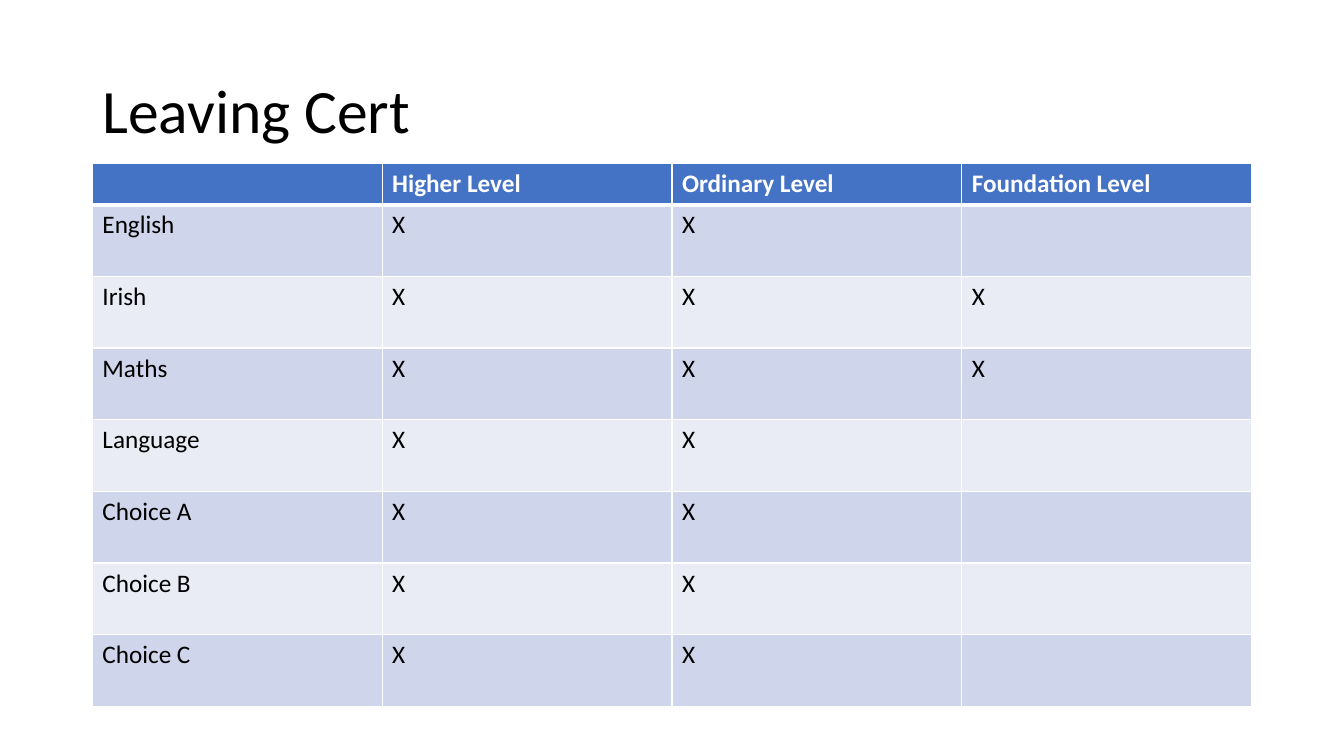
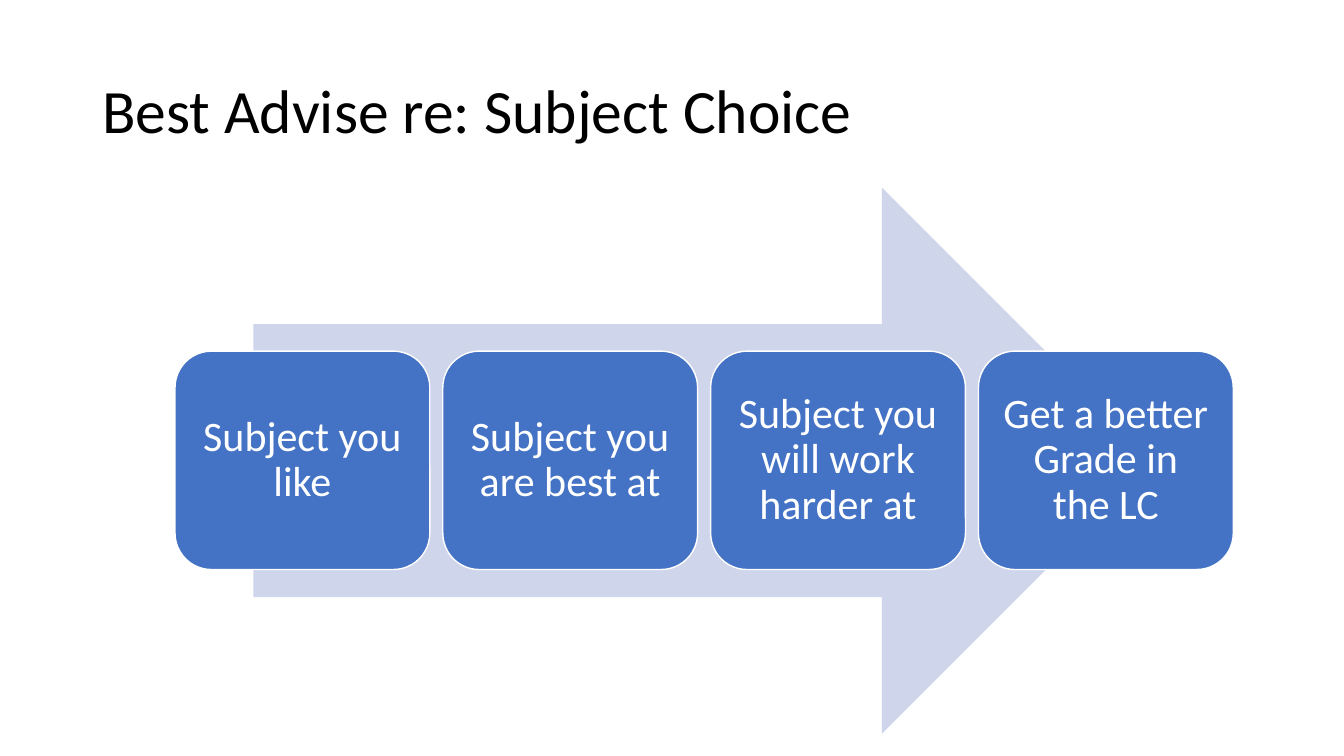
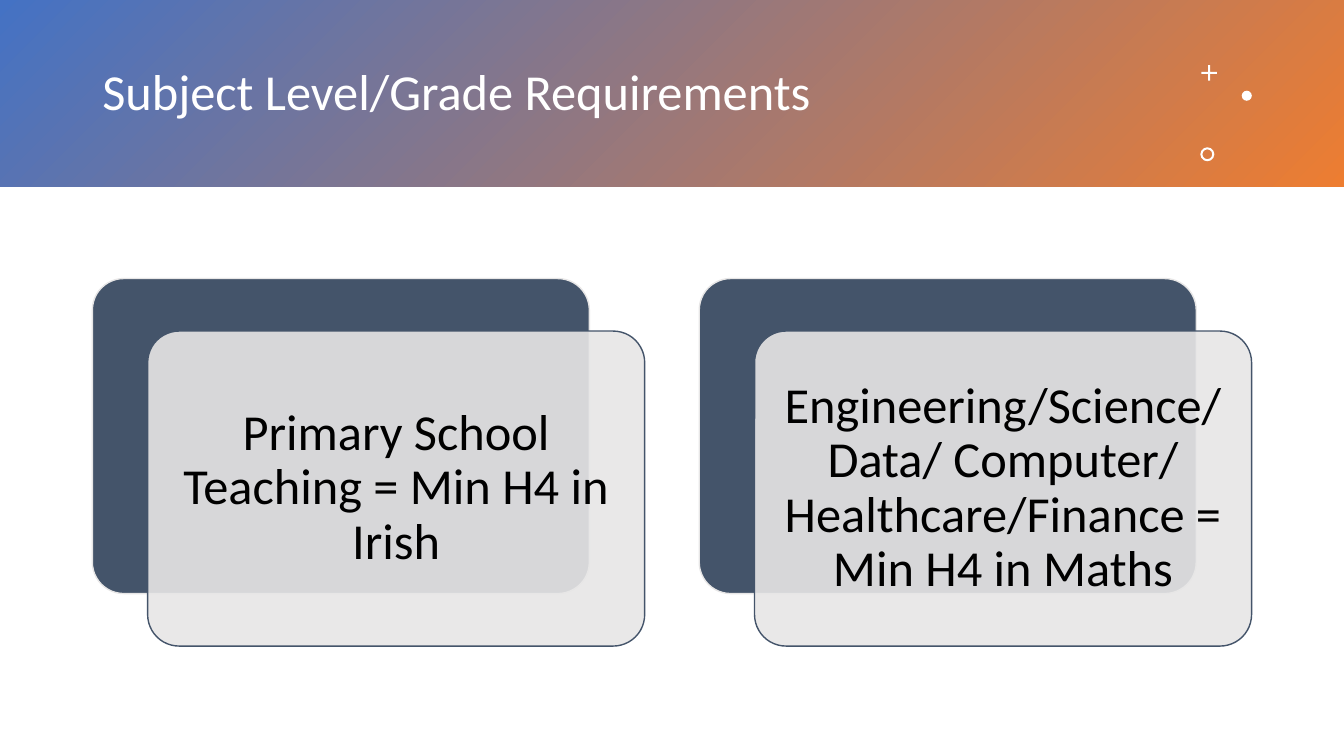
from dataclasses import dataclass

from lxml.etree import SubElement
from pptx import Presentation
from pptx.dml.color import RGBColor
from pptx.enum.shapes import MSO_SHAPE
from pptx.enum.text import MSO_ANCHOR, PP_ALIGN
from pptx.oxml.ns import qn
from pptx.util import Pt


@dataclass(frozen=True)
class Theme:
    font: str = "Calibri"
    black: str = "000000"
    white: str = "FFFFFF"
    blue: str = "4472C4"
    orange: str = "ED7D31"
    slate: str = "44546A"
    grey: str = "E7E6E6"
    pale_blue: str = "CFD5EA"
    paler_blue: str = "E9EBF5"
    title_size: int = 44
    large_size: int = 36
    step_size: int = 30
    table_size: int = 18


THEME = Theme()
PAGE_WIDTH, PAGE_HEIGHT = 960, 540
MARGIN = 66
CONTENT_WIDTH = PAGE_WIDTH - 2 * MARGIN


def rgb(color):
    return RGBColor.from_string(color)


class Deck:
    def __init__(self, theme):
        self.theme = theme
        self.deck = Presentation()
        self.deck.slide_width = Pt(PAGE_WIDTH)
        self.deck.slide_height = Pt(PAGE_HEIGHT)
        self.page = None

    def add_page(self):
        self.page = self.deck.slides.add_slide(self.deck.slide_layouts[6])

    def style(self, para, size, color, bold=False):
        font = para.font
        font.name, font.size, font.bold = self.theme.font, Pt(size), bold
        font.color.rgb = rgb(color)

    def set_text(self, shape, text, size, color, align):
        frame = shape.text_frame
        frame.word_wrap = True
        frame.vertical_anchor = MSO_ANCHOR.MIDDLE
        para = frame.paragraphs[0]
        para.text = text
        para.alignment = align
        para.line_spacing = 0.9
        self.style(para, size, color)

    def title(self, text, top=29, width=CONTENT_WIDTH, height=104, size=THEME.title_size, color=THEME.black):
        box = self.page.shapes.add_textbox(Pt(MARGIN), Pt(top), Pt(width), Pt(height))
        self.set_text(box, text, size, color, PP_ALIGN.LEFT)

    def shape(self, kind, left, top, width, height, fill, line=None, corner=None, opacity=None):
        shape = self.page.shapes.add_shape(kind, Pt(left), Pt(top), Pt(width), Pt(height))
        shape.shadow.inherit = False
        shape.fill.solid()
        shape.fill.fore_color.rgb = rgb(fill)
        if opacity is not None:
            color = shape.element.spPr.find(f"{qn('a:solidFill')}/{qn('a:srgbClr')}")
            SubElement(color, qn("a:alpha"), val=str(opacity * 1000))
        if line:
            shape.line.color.rgb = rgb(line)
            shape.line.width = Pt(1)
        else:
            shape.line.fill.background()
        if corner is not None:
            shape.adjustments[0] = corner
        return shape

    def label(self, shape, text, size, color, inset):
        frame = shape.text_frame
        frame.margin_left = frame.margin_right = Pt(inset)
        frame.margin_top = frame.margin_bottom = Pt(inset)
        self.set_text(shape, text, size, color, PP_ALIGN.CENTER)

    def gradient_band(self, height, start, end):
        band = self.shape(MSO_SHAPE.RECTANGLE, 0, 0, PAGE_WIDTH, height, start)
        band.fill.gradient()
        band.fill.gradient_angle = 315
        for stop, color in zip(band.fill.gradient_stops, (start, end)):
            stop.color.rgb = rgb(color)

    def border(self, cell, top, bottom):
        properties = cell._tc.get_or_add_tcPr()
        for side, width in (("L", 1), ("R", 1), ("T", top), ("B", bottom)):
            line = SubElement(properties, qn(f"a:ln{side}"), w=str(Pt(width)))
            fill = SubElement(line, qn("a:solidFill"))
            SubElement(fill, qn("a:srgbClr"), val=self.theme.white)

    def table(self, rows, top, header_height, row_height):
        theme = self.theme
        height = header_height + row_height * (len(rows) - 1)
        frame = self.page.shapes.add_table(
            len(rows), len(rows[0]), Pt(MARGIN), Pt(top), Pt(CONTENT_WIDTH), Pt(height))
        for row_index, texts in enumerate(rows):
            header = row_index == 0
            band = theme.pale_blue if row_index % 2 else theme.paler_blue
            frame.table.rows[row_index].height = Pt(header_height if header else row_height)
            for column_index, text in enumerate(texts):
                cell = frame.table.cell(row_index, column_index)
                # The heavier rule under the header is shared with the first body row.
                self.border(cell, top=3 if row_index == 1 else 1, bottom=3 if header else 1)
                cell.fill.solid()
                cell.fill.fore_color.rgb = rgb(theme.blue if header else band)
                para = cell.text_frame.paragraphs[0]
                para.text = text
                self.style(para, theme.table_size, theme.white if header else theme.black, header)


def leaving_cert(deck):
    deck.add_page()
    deck.title("Leaving Cert")
    subjects = ("English", "Irish", "Maths", "Language", "Choice A", "Choice B", "Choice C")
    with_foundation = ("Irish", "Maths")
    rows = [("", "Higher Level", "Ordinary Level", "Foundation Level")]
    rows += [(name, "X", "X", "X" if name in with_foundation else "") for name in subjects]
    deck.table(rows, top=117, header_height=29.2, row_height=51.2)


def subject_choice(deck):
    theme = deck.theme
    deck.add_page()
    deck.title("Best Advise re: Subject Choice")
    deck.shape(MSO_SHAPE.RIGHT_ARROW, 181, 134, 644, 390, theme.pale_blue)
    steps = ("Subject you like", "Subject you are best at",
             "Subject you will work harder at", "Get a better Grade in the LC")
    width, gap = 182, 9.3
    for index, text in enumerate(steps):
        step = deck.shape(MSO_SHAPE.ROUNDED_RECTANGLE, 125 + index * (width + gap), 250.8,
                          width, 156, theme.blue, line=theme.white)
        deck.label(step, text, theme.step_size, theme.white, inset=8.4)


def requirements(deck):
    theme = deck.theme
    deck.add_page()
    deck.gradient_band(133.4, theme.blue, theme.orange)
    deck.title("Subject Level/Grade Requirements", 24, 774, 86, theme.large_size, theme.white)
    deck.shape(MSO_SHAPE.CROSS, 858.2, 46.6, 11, 11, theme.white, corner=0.43)
    deck.shape(MSO_SHAPE.OVAL, 887, 64.8, 7.2, 7.2, theme.white)
    deck.shape(MSO_SHAPE.DONUT, 857.4, 105.2, 10, 10, theme.white, corner=0.15)

    cards = ("Primary School Teaching = Min H4 in Irish",
             "Engineering/Science/ Data/ Computer/ Healthcare/Finance = Min H4 in Maths")
    width, height, pitch = 355, 225, 433.5
    for index, text in enumerate(cards):
        left, top = MARGIN + index * pitch, 199
        deck.shape(MSO_SHAPE.ROUNDED_RECTANGLE, left, top, width, height,
                   theme.slate, line=theme.grey, corner=0.1)
        front = deck.shape(MSO_SHAPE.ROUNDED_RECTANGLE, left + 39.5, top + 37.5, width, height,
                           theme.grey, line=theme.slate, corner=0.1, opacity=90)
        deck.label(front, text, theme.large_size, theme.black, inset=10.8)


def main():
    deck = Deck(THEME)
    leaving_cert(deck)
    subject_choice(deck)
    requirements(deck)
    deck.deck.save("out.pptx")


if __name__ == "__main__":
    main()
